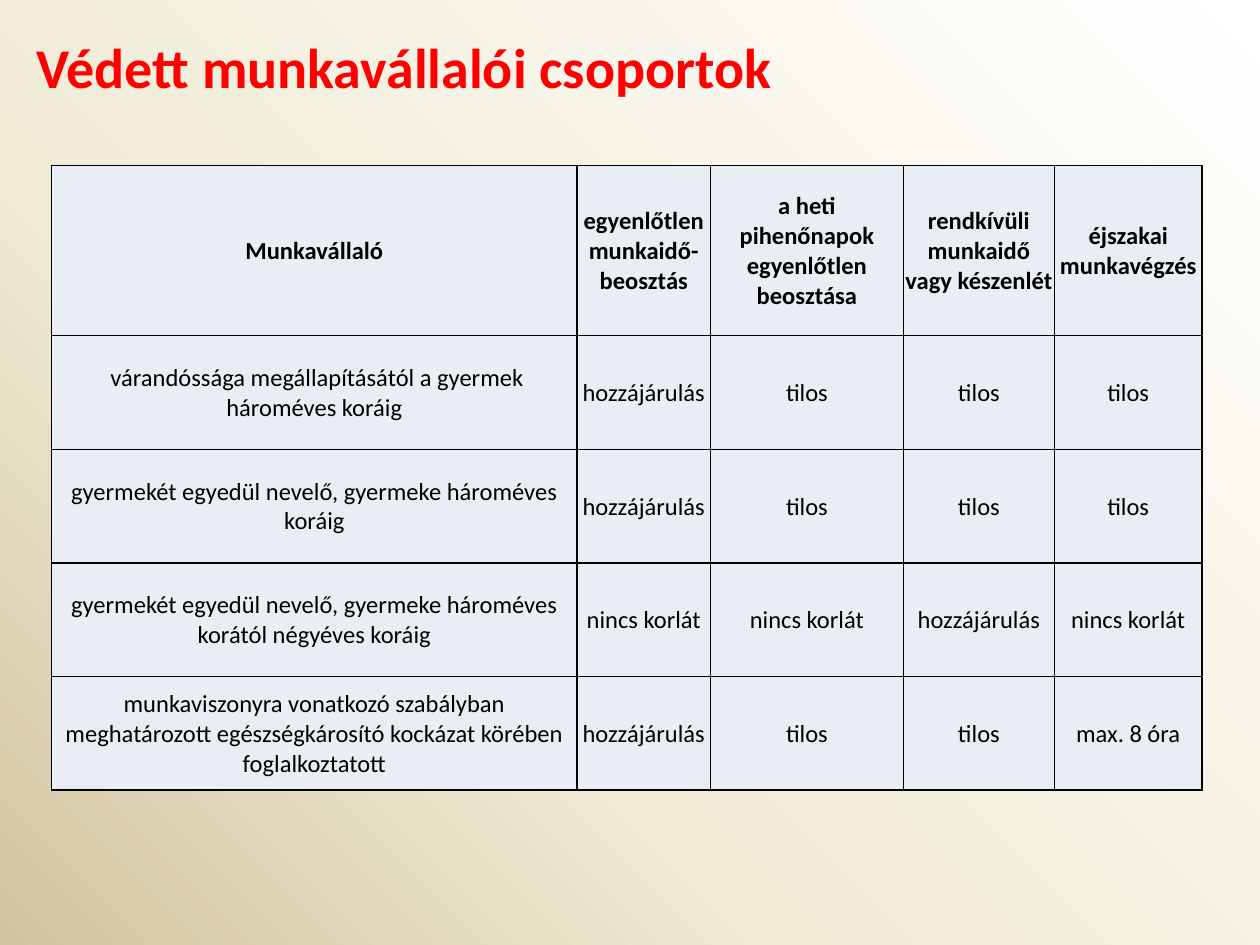
from lxml import etree
from pptx import Presentation
from pptx.dml.color import RGBColor
from pptx.enum.text import MSO_ANCHOR, PP_ALIGN
from pptx.oxml.ns import qn
from pptx.util import Inches, Pt

MIDDLE = MSO_ANCHOR.MIDDLE
LEFT, CENTER = PP_ALIGN.LEFT, PP_ALIGN.CENTER

RED = RGBColor(0xFF, 0x00, 0x00)
BLACK = RGBColor(0x00, 0x00, 0x00)
WHITE = RGBColor(0xFF, 0xFF, 0xFF)
CREAM = RGBColor(0xF0, 0xEB, 0xD5)
TAN = RGBColor(0xD1, 0xC3, 0x9F)
PALE_BLUE = RGBColor(0xE9, 0xED, 0xF4)

SLIDE_WIDTH, SLIDE_HEIGHT = Inches(10), Inches(7.5)
GRADIENT_STOPS = ((0, WHITE), (65, CREAM), (100, TAN))
GRADIENT_ANGLE = 225
COLUMN_WIDTHS = (4.17, 1.06, 1.53, 1.2, 1.17)
ROW_HEIGHTS = (1.35, 0.9, 0.9, 0.9, 0.9)
BORDER_WIDTH = Pt(1)

TITLE_FONT = {"name": "Calibri", "size": Pt(32), "bold": True}
HEADER_FONT = {"name": "Calibri", "size": Pt(14), "bold": True}
BODY_FONT = {**HEADER_FONT, "bold": False}
CELL_FORMAT = {
    "margin_left": Inches(0.01),
    "margin_right": Inches(0.01),
    "margin_top": Inches(0.01),
    "margin_bottom": 0,
    "vertical_anchor": MIDDLE,
}

TITLE = "Védett munkavállalói csoportok"
TABLE_ROWS = (
    ("Munkavállaló", "egyenlőtlen munkaidő-beosztás",
     "a heti pihenőnapok egyenlőtlen beosztása",
     "rendkívüli munkaidő vagy készenlét", "éjszakai munkavégzés"),
    (" várandóssága megállapításától a gyermek hároméves koráig",
     "hozzájárulás", "tilos", "tilos", "tilos"),
    ("gyermekét egyedül nevelő, gyermeke hároméves koráig",
     "hozzájárulás", "tilos", "tilos", "tilos"),
    ("gyermekét egyedül nevelő, gyermeke hároméves korától négyéves koráig",
     "nincs korlát", "nincs korlát", "hozzájárulás", "nincs korlát"),
    ("munkaviszonyra vonatkozó szabályban meghatározott egészségkárosító "
     "kockázat körében foglalkoztatott",
     "hozzájárulás", "tilos", "tilos", "max. 8 óra"),
)


def slide_box(left, top, width, height):
    """Turn shares of the slide's size into a box of lengths."""
    return (int(SLIDE_WIDTH * left), int(SLIDE_HEIGHT * top),
            int(SLIDE_WIDTH * width), int(SLIDE_HEIGHT * height))


def apply_format(target, values):
    """Set every attribute named in a dict of format values."""
    for name, value in values.items():
        setattr(target, name, value)


def write_text(text_frame, text, font, color, alignment):
    """Write one formatted paragraph into a text frame."""
    paragraph = text_frame.paragraphs[0]
    paragraph.alignment = alignment
    run = paragraph.add_run()
    run.text = text
    apply_format(run.font, font)
    run.font.color.rgb = color


def add_color(parent, color):
    """Append a solid colour element to an XML parent."""
    etree.SubElement(parent, qn("a:srgbClr"), val=str(color))


def paint_background(slide):
    """Fill the slide with the diagonal three-stop gradient."""
    fill = slide.background.fill
    fill.gradient()
    fill.gradient_angle = GRADIENT_ANGLE
    stop_list = next(slide.element.iter(qn("a:gsLst")))
    for stop in list(stop_list):
        stop_list.remove(stop)
    for percent, color in GRADIENT_STOPS:
        add_color(etree.SubElement(stop_list, qn("a:gs"), pos=str(percent * 1000)), color)


def add_title(slide, box):
    """Place the slide title in the given box."""
    text_frame = slide.shapes.add_textbox(*box).text_frame
    apply_format(text_frame, {"word_wrap": True, "vertical_anchor": MIDDLE})
    write_text(text_frame, TITLE, TITLE_FONT, RED, LEFT)


def add_borders(cell):
    """Draw a thin black line on all four sides of a cell."""
    properties = cell._tc.get_or_add_tcPr()
    for position, side in enumerate("LRTB"):
        line = etree.Element(qn(f"a:ln{side}"), w=str(BORDER_WIDTH))
        add_color(etree.SubElement(line, qn("a:solidFill")), BLACK)
        properties.insert(position, line)


def add_rules_table(slide, box):
    """Place the table of working time rules, sharing out the given box."""
    left, top, width, height = box
    table = slide.shapes.add_table(len(ROW_HEIGHTS), len(COLUMN_WIDTHS), *box).table
    apply_format(table, {"first_row": False, "horz_banding": False})
    for column, share in zip(table.columns, COLUMN_WIDTHS):
        column.width = int(width * share / sum(COLUMN_WIDTHS))
    for row, share in zip(table.rows, ROW_HEIGHTS):
        row.height = int(height * share / sum(ROW_HEIGHTS))
    for row_index, texts in enumerate(TABLE_ROWS):
        font = BODY_FONT if row_index else HEADER_FONT
        for column_index, text in enumerate(texts):
            cell = table.cell(row_index, column_index)
            apply_format(cell, CELL_FORMAT)
            cell.fill.solid()
            cell.fill.fore_color.rgb = PALE_BLUE
            add_borders(cell)
            write_text(cell.text_frame, text, font, BLACK, CENTER)


def main():
    """Build and save the presentation."""
    presentation = Presentation()
    apply_format(presentation, {"slide_width": SLIDE_WIDTH, "slide_height": SLIDE_HEIGHT})
    slide = presentation.slides.add_slide(presentation.slide_layouts[6])
    paint_background(slide)
    add_title(slide, slide_box(0.019, 0.007, 0.924, 0.127))
    add_rules_table(slide, slide_box(0.041, 0.175, 0.913, 0.661))
    presentation.save("out.pptx")


if __name__ == "__main__":
    main()
